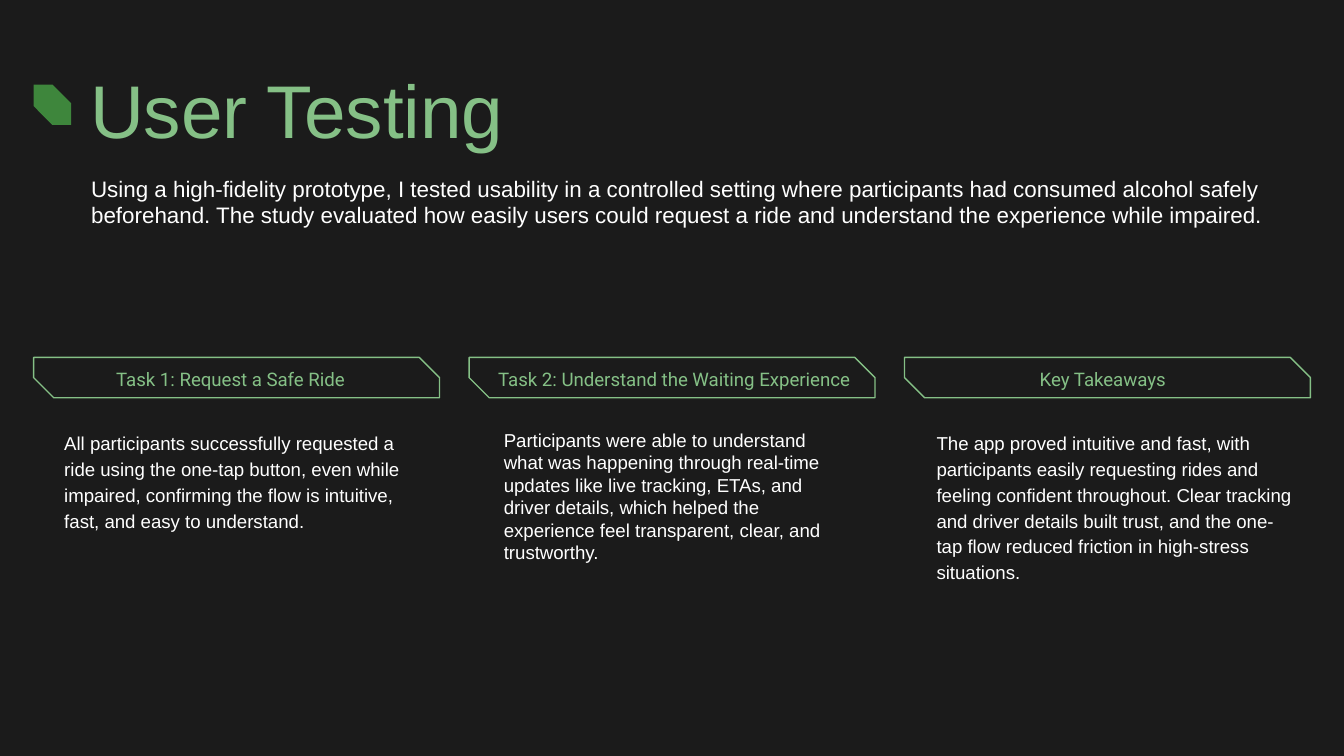
from dataclasses import dataclass

from pptx import Presentation
from pptx.dml.color import RGBColor
from pptx.enum import shapes, text
from pptx.util import Inches, Pt


@dataclass(frozen=True)
class Theme:
    background: str = "1B1B1B"
    accent: str = "3E863C"
    green: str = "85C086"
    white: str = "FFFFFF"
    title_size: int = 40
    intro_size: int = 12
    body_size: int = 10
    font: str = "Arial"
    heading_font: str = "Roboto"


theme = Theme()


def add_snipped_box(left, top, width, height, fill, line=None):
    box = slide.shapes.add_shape(
        shapes.MSO_SHAPE.SNIP_2_DIAG_RECTANGLE,
        Inches(left), Inches(top), Inches(width), Inches(height))
    box.adjustments[0], box.adjustments[1] = 0, 0.5
    box.shadow.inherit = False
    box.fill.solid()
    box.fill.fore_color.rgb = RGBColor.from_string(fill)
    if line:
        box.line.color.rgb = RGBColor.from_string(line)
        box.line.width = Pt(0.75)
    else:
        box.line.fill.background()


def write_text(box, place, words, size, color, font=theme.font, margins=(0.1,) * 4,
               spacing=1.0, before=0, align=text.PP_ALIGN.LEFT,
               anchor=text.MSO_ANCHOR.TOP, fit=text.MSO_AUTO_SIZE.SHAPE_TO_FIT_TEXT):
    box.left, box.top, box.width, box.height = [Inches(n) for n in place]
    frame = box.text_frame
    frame.text = words
    frame.word_wrap = True
    frame.auto_size = fit
    frame.vertical_anchor = anchor
    (frame.margin_left, frame.margin_top,
     frame.margin_right, frame.margin_bottom) = [Inches(n) for n in margins]
    para = frame.paragraphs[0]
    para.alignment = align
    para.line_spacing = spacing
    para.space_before = Pt(before)
    span = para.runs[0]
    span.font.size = Pt(size)
    span.font.name = font
    span.font.color.rgb = RGBColor.from_string(color)


# Deck and 16:9 page
deck = Presentation()
deck.slide_width, deck.slide_height = Inches(10), Inches(10 * 9 / 16)
slide = deck.slides.add_slide(deck.slide_layouts.get_by_name("Title Only"))
slide.background.fill.solid()
slide.background.fill.fore_color.rgb = RGBColor.from_string(theme.background)

# Title with its marker
add_snipped_box(0.25, 0.63, 0.28, 0.3, theme.accent)
write_text(slide.shapes.title, (0.67, 0.45, 4.39, 0.81), "User Testing",
           theme.title_size, theme.green, margins=(0, 0.1, 0.1, 0.1), spacing=0.9)

# Introduction
intro = slide.shapes.add_textbox(0, 0, 0, 0)
write_text(intro, (0.58, 1.2, 9.03, 0.81),
           "Using a high-fidelity prototype, I tested usability in a controlled setting "
           "where participants had consumed alcohol safely beforehand. The study evaluated "
           "how easily users could request a ride and understand the experience while "
           "impaired.", theme.intro_size, theme.white)

# Columns: heading, its left and width, body, its place, line spacing, space before
columns = [
    ("Task 1: Request a Safe Ride", 0.38, 2.67,
     "All participants successfully requested a ride using the one-tap button, even "
     "while impaired, confirming the flow is intuitive, fast, and easy to understand.",
     (0.38, 3.09, 2.77, 1.67), 1.15, 12),
    ("Task 2: Understand the Waiting Experience", 3.63, 2.77,
     "Participants were able to understand what was happening through real-time updates "
     "like live tracking, ETAs, and driver details, which helped the experience feel "
     "transparent, clear, and trustworthy.",
     (3.65, 3.09, 2.72, 1.21), 1.0, 0),
    ("Key Takeaways", 6.87, 2.67,
     "The app proved intuitive and fast, with participants easily requesting rides and "
     "feeling confident throughout. Clear tracking and driver details built trust, and "
     "the one-tap flow reduced friction in high-stress situations.",
     (6.87, 3.09, 2.88, 1.7), 1.15, 12),
]
for index, (heading, left, width, body, place, spacing, before) in enumerate(columns):
    add_snipped_box(0.25 + 3.24 * index, 2.66, 3.02, 0.3, theme.background, theme.green)
    heading_box = slide.shapes.add_textbox(0, 0, 0, 0)
    write_text(heading_box, (left, 2.66, width, 0.29), heading, theme.body_size,
               theme.green, theme.heading_font, margins=(0,) * 4, spacing=1.15,
               align=text.PP_ALIGN.CENTER, anchor=text.MSO_ANCHOR.MIDDLE,
               fit=text.MSO_AUTO_SIZE.NONE)
    body_box = slide.shapes.add_textbox(0, 0, 0, 0)
    write_text(body_box, place, body, theme.body_size, theme.white,
               spacing=spacing, before=before)

deck.save("out.pptx")
